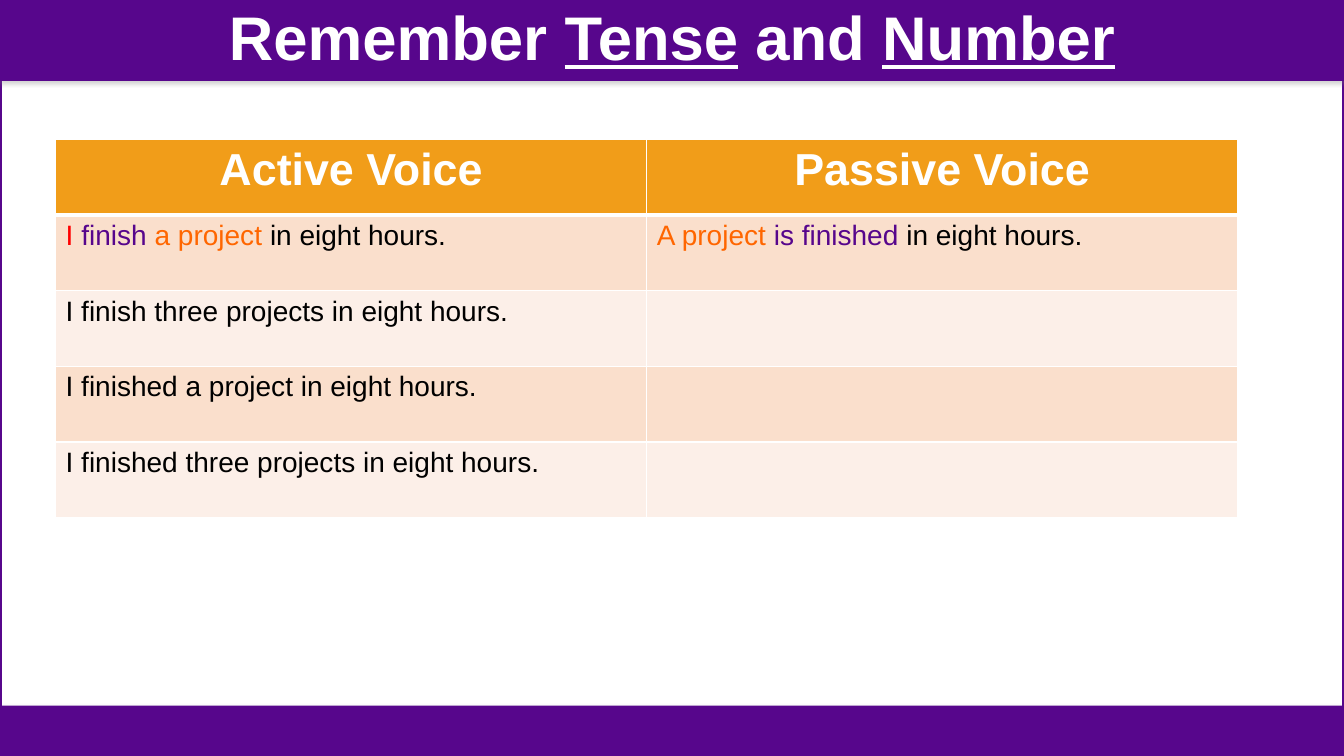
from lxml import etree
from pptx import Presentation
from pptx.dml.color import RGBColor
from pptx.enum.shapes import MSO_SHAPE
from pptx.enum.text import MSO_ANCHOR, PP_ALIGN
from pptx.oxml import parse_xml
from pptx.oxml.ns import nsdecls
from pptx.util import Pt

PX = 9525
SLIDE_W, SLIDE_H = 1280, 720
HEADER_H = 77
FOOTER_H = 48
TABLE_LEFT, TABLE_TOP = 53, 133
COLUMN_W, ROW_H = 563, 72

RECTANGLE = MSO_SHAPE.RECTANGLE
MIDDLE = MSO_ANCHOR.MIDDLE
LEFT, CENTER = PP_ALIGN.LEFT, PP_ALIGN.CENTER

PURPLE = RGBColor(0x57, 0x06, 0x8C)
WHITE = RGBColor(0xFF, 0xFF, 0xFF)
BLACK = RGBColor(0x00, 0x00, 0x00)
RED = RGBColor(0xFF, 0x00, 0x00)
ORANGE = RGBColor(0xFF, 0x66, 0x00)
AMBER = RGBColor(0xF1, 0x9D, 0x19)
PEACH = RGBColor(0xFA, 0xDF, 0xCC)
CREAM = RGBColor(0xFC, 0xEF, 0xE8)


def add_text(paragraph, text, size=20, color=BLACK, bold=False,
             underline=False, align=LEFT):
    paragraph.alignment = align
    run = paragraph.add_run()
    run.text = text
    font = run.font
    font.name = "Arial"
    font.size = Pt(size)
    font.bold = bold
    font.underline = underline
    font.color.rgb = color


def add_border(cell, edge, points):
    properties = cell._tc.get_or_add_tcPr()
    properties.append(parse_xml(
        f'<a:{edge} {nsdecls("a")} w="{Pt(points)}"><a:solidFill>'
        f'<a:srgbClr val="{WHITE}"/></a:solidFill></a:{edge}>'))


prs = Presentation()
prs.slide_width = SLIDE_W * PX
prs.slide_height = SLIDE_H * PX
slide = prs.slides.add_slide(prs.slide_layouts[6])

frame = slide.shapes.add_shape(RECTANGLE, 0, 0, SLIDE_W * PX, SLIDE_H * PX)
frame.shadow.inherit = False
frame.fill.background()
frame.line.color.rgb = PURPLE
frame.line.width = Pt(2.25)

for top, height in [(0, HEADER_H), (SLIDE_H - FOOTER_H, FOOTER_H)]:
    band = slide.shapes.add_shape(RECTANGLE, 0, top * PX, SLIDE_W * PX, height * PX)
    band.shadow.inherit = False
    band.fill.solid()
    band.fill.fore_color.rgb = PURPLE
    band.line.fill.background()
    effects = band._element.spPr.find("{*}effectLst")
    effects.append(etree.fromstring(
        f'<a:outerShdw {nsdecls("a")} blurRad="{Pt(3.1)}" dist="{Pt(1.8)}" '
        'dir="5400000" rotWithShape="0"><a:srgbClr val="808080">'
        '<a:alpha val="35000"/></a:srgbClr></a:outerShdw>'))

title = slide.shapes.add_textbox(0, 0, SLIDE_W * PX, HEADER_H * PX).text_frame
title.word_wrap = True
title.vertical_anchor = MIDDLE
title.paragraphs[0].line_spacing = 0.9
for words, underlined in [("Remember ", False), ("Tense", True),
                          (" and ", False), ("Number", True)]:
    add_text(title.paragraphs[0], words, size=44, color=WHITE, bold=True,
             underline=underlined, align=CENTER)

voice_rows = [
    [[("Active Voice", WHITE)], [("Passive Voice", WHITE)]],
    [[("I ", RED), ("finish ", PURPLE), ("a project ", ORANGE),
      ("in eight hours.", BLACK)],
     [("A project ", ORANGE), ("is finished ", PURPLE),
      ("in eight hours.", BLACK)]],
    [[("I finish three projects in eight hours.", BLACK)], []],
    [[("I finished a project in eight hours.", BLACK)], []],
    [[("I finished three projects in eight hours.", BLACK)], []],
]
voices = slide.shapes.add_table(
    len(voice_rows), 2, TABLE_LEFT * PX, TABLE_TOP * PX,
    2 * COLUMN_W * PX, len(voice_rows) * ROW_H * PX).table

for row, sentences in enumerate(voice_rows):
    is_header = row == 0
    fill = AMBER if is_header else (PEACH if row % 2 else CREAM)
    for column, phrases in enumerate(sentences):
        cell = voices.cell(row, column)
        add_border(cell, "lnL", 1)
        add_border(cell, "lnR", 1)
        add_border(cell, "lnT", 3 if row == 1 else 1)
        add_border(cell, "lnB", 3 if is_header else 1)
        cell.fill.solid()
        cell.fill.fore_color.rgb = fill
        for words, color in phrases:
            add_text(cell.text_frame.paragraphs[0], words,
                     size=32 if is_header else 20, color=color,
                     bold=is_header, align=CENTER if is_header else LEFT)

prs.save("out.pptx")
